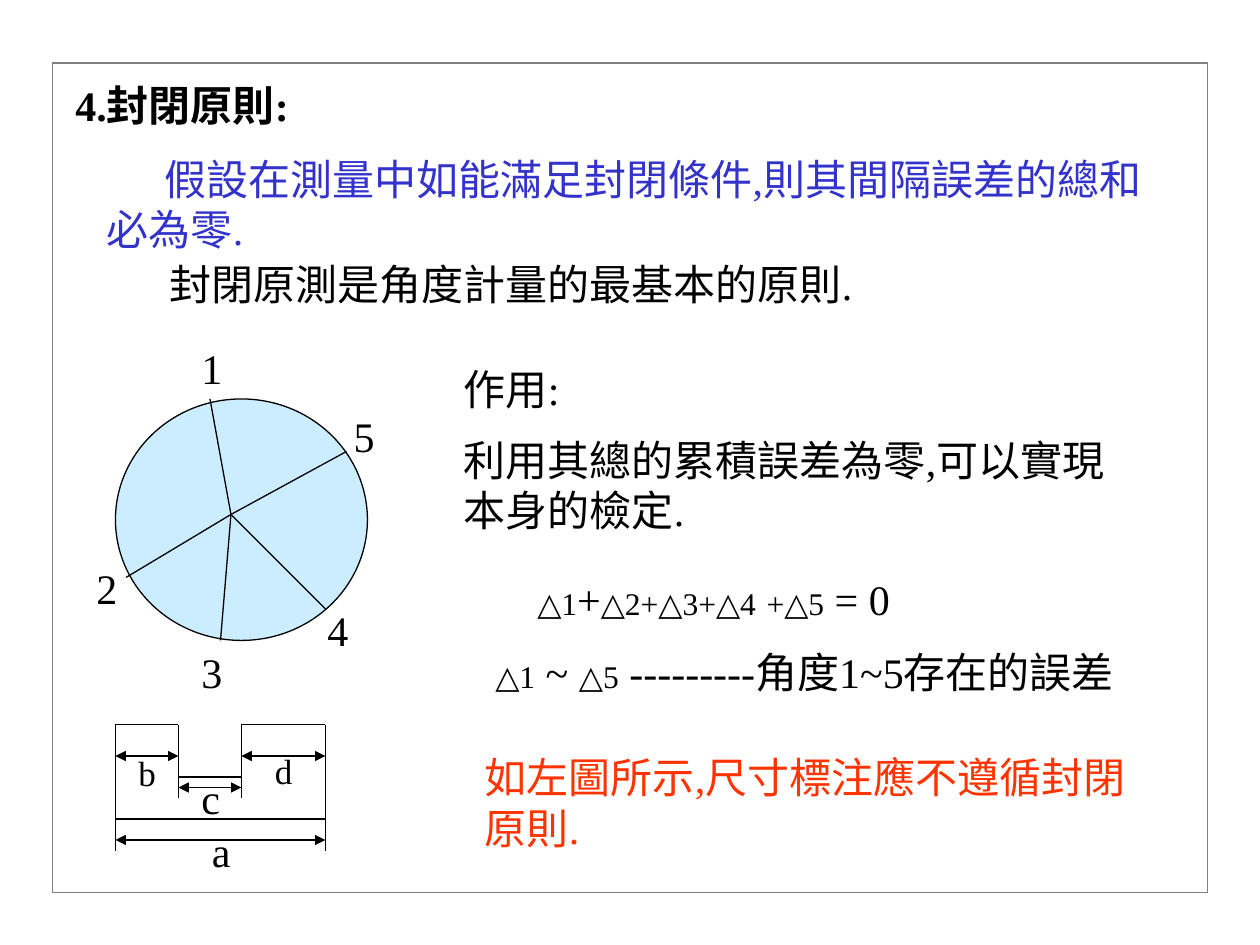
from dataclasses import dataclass
from itertools import pairwise

from lxml import etree
from pptx import Presentation
from pptx.dml.color import RGBColor
from pptx.enum.shapes import MSO_CONNECTOR as Connector, MSO_SHAPE as Shape
from pptx.enum.text import MSO_AUTO_SIZE as AutoSize
from pptx.oxml.ns import qn
from pptx.util import Pt

FONT = "Times New Roman"
BLACK, BLUE, RED = "000000", "3333CC", "FF3300"
PALE_BLUE, GREY = "CCECFF", "808080"
LINE_WIDTH = 0.75

Point = tuple[float, float]
Run = tuple[str, float]


@dataclass
class Label:
    text: str
    left: float
    top: float
    width: float
    size: float = 24


@dataclass
class Dimension:
    left: float
    right: float
    y: float
    label: Label


def color(value: str) -> RGBColor:
    return RGBColor.from_string(value)


def add_text(slide, paragraphs: list[str | list[Run]], left: float, top: float,
             width: float, height: float = 36, *, size: float = 24,
             fill: str = BLACK, bold: bool = False, indent: float = 0) -> None:
    """Each paragraph is a string or a list of (text, size) runs."""
    box = slide.shapes.add_textbox(Pt(left), Pt(top), Pt(width), Pt(height))
    frame = box.text_frame
    frame.word_wrap = True
    frame.auto_size = AutoSize.SHAPE_TO_FIT_TEXT
    for index, content in enumerate(paragraphs):
        paragraph = frame.add_paragraph() if index else frame.paragraphs[0]
        if index:
            paragraph.space_before = Pt(12)
        if indent:
            properties = paragraph._p.get_or_add_pPr()
            properties.set("marL", "0")
            properties.set("indent", str(Pt(indent)))
        runs = [(content, size)] if isinstance(content, str) else content
        for text, run_size in runs:
            run = paragraph.add_run()
            run.text = text
            run.font.name = FONT
            run.font.size = Pt(run_size)
            run.font.bold = bold
            run.font.color.rgb = color(fill)


def add_label(slide, label: Label) -> None:
    add_text(slide, [label.text], label.left, label.top, label.width,
             label.size * 1.5, size=label.size)


def add_outline(slide, kind: Shape, left: float, top: float, width: float,
                height: float, *, line: str, fill: str | None = None) -> None:
    shape = slide.shapes.add_shape(kind, Pt(left), Pt(top), Pt(width), Pt(height))
    shape.shadow.inherit = False
    if fill:
        shape.fill.solid()
        shape.fill.fore_color.rgb = color(fill)
    else:
        shape.fill.background()
    shape.line.color.rgb = color(line)
    shape.line.width = Pt(LINE_WIDTH)


def add_line(slide, start: Point, end: Point, arrows: bool = False) -> None:
    connector = slide.shapes.add_connector(
        Connector.STRAIGHT, *map(Pt, start), *map(Pt, end))
    connector.line.color.rgb = color(BLACK)
    connector.line.width = Pt(LINE_WIDTH)
    if arrows:
        outline = connector.line._ln
        for tag in ("a:headEnd", "a:tailEnd"):
            etree.SubElement(outline, qn(tag), type="triangle")
    etree.SubElement(connector._element.spPr, qn("a:effectLst"))


def add_dimension(slide, dimension: Dimension) -> None:
    add_line(slide, (dimension.left, dimension.y),
             (dimension.right, dimension.y), arrows=True)
    add_label(slide, dimension.label)


def draw_circle(slide) -> None:
    add_outline(slide, Shape.OVAL, 66, 228, 144, 138, line=BLACK, fill=PALE_BLUE)
    center = (132, 294)
    for rim in [(198, 258), (186, 348), (72, 330), (120, 228), (126, 366)]:
        add_line(slide, center, rim)
    for label in [
        Label("1", 108, 192, 36),
        Label("2", 48, 318, 30),
        Label("3", 108, 366, 30),
        Label("4", 180, 342, 48),
        Label("5", 195, 231, 36),
    ]:
        add_label(slide, label)


def draw_notched_part(slide) -> None:
    left, notch_left, notch_right, right = 66, 102, 138, 186
    top, notch, bottom = 414, 444, 468
    outline = [(left, top), (notch_left, top), (notch_left, notch),
               (notch_right, notch), (notch_right, top), (right, top),
               (right, bottom), (left, bottom), (left, top)]
    for start, end in pairwise(outline):
        add_line(slide, start, end)

    # Extension lines below the part and the notch
    for x, y, length in [(left, bottom, 18), (right, bottom, 18),
                         (notch_left, notch, 12), (notch_right, notch, 12)]:
        add_line(slide, (x, y), (x, y + length))

    for dimension in [
        Dimension(left, right, 480, Label("a", 114, 468, 66)),
        Dimension(left, notch_left, 432, Label("b", 72, 426, 30, 20)),
        Dimension(notch_left, notch_right, 450, Label("c", 108, 438, 42)),
        Dimension(notch_right, right, 432, Label("d", 150, 425, 36, 20)),
    ]:
        add_dimension(slide, dimension)


def main() -> None:
    presentation = Presentation()
    presentation.slide_width, presentation.slide_height = Pt(720), Pt(540)
    slide = presentation.slides.add_slide(presentation.slide_layouts[6])

    # Heading and principle
    add_text(slide, ["4.封閉原則:"], 36, 42, 216, bold=True)
    add_text(slide, ["假設在測量中如能滿足封閉條件,則其間隔誤差的總和必為零."],
             54, 84, 618, 65, fill=BLUE, indent=33)
    add_text(slide, ["封閉原測是角度計量的最基本的原則."], 90, 144, 408)

    # Divided circle
    draw_circle(slide)

    # Purpose and error equation
    add_text(slide, ["作用:", "利用其總的累積誤差為零,可以實現本身的檢定."],
             258, 204, 402, 108)
    add_text(slide, [[("△1", 18), ("+", 24), ("△2+△3+△4", 18), (" ", 24),
                      ("+△5", 18), (" = 0", 24)]], 300, 324, 282)
    add_text(slide, [[("△1", 18), (" ~ ", 24), ("△5", 18),
                      (" ---------角度1~5存在的誤差", 24)]], 276, 366, 390)

    # Dimensioned part and its remark
    draw_notched_part(slide)
    add_text(slide, ["如左圖所示,尺寸標注應不遵循封閉原則."],
             270, 426, 384, 65, fill=RED)

    # Frame
    add_outline(slide, Shape.RECTANGLE, 30, 36, 660, 474, line=GREY)

    presentation.save("out.pptx")


if __name__ == "__main__":
    main()
